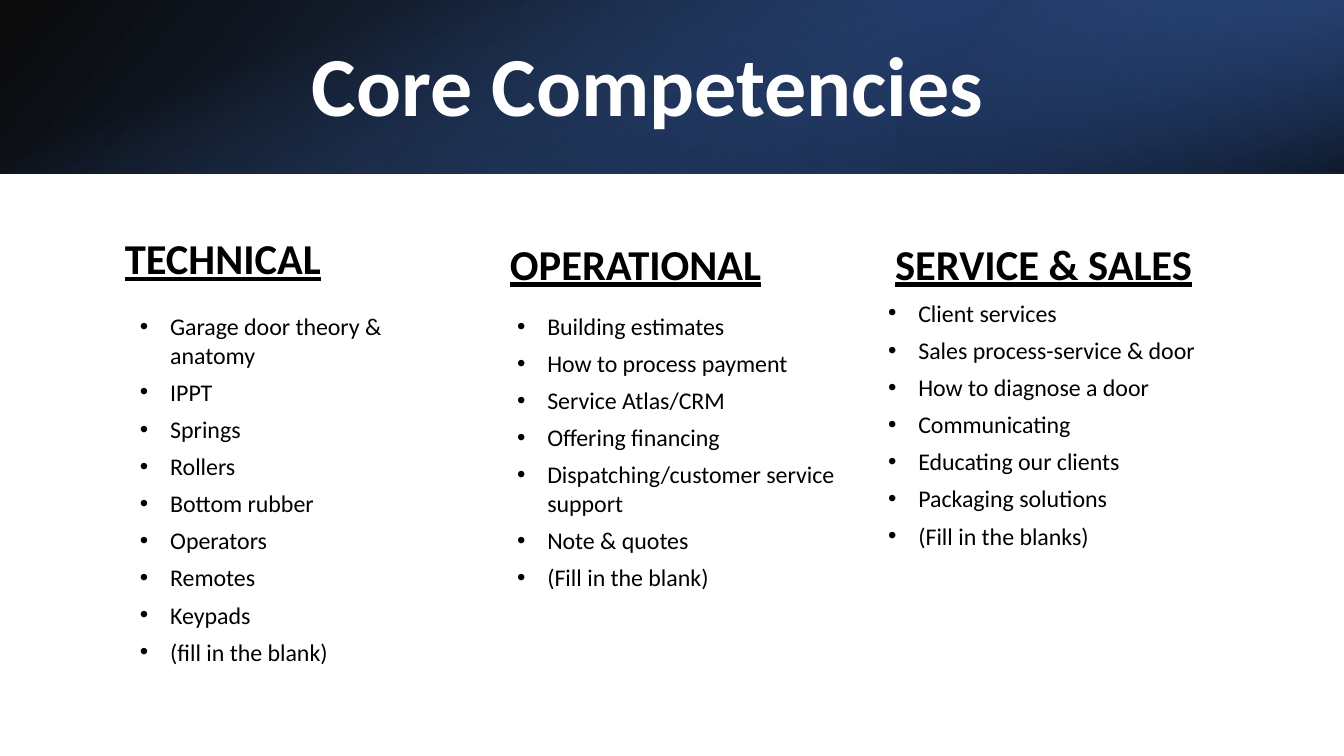
from lxml import etree
from pptx import Presentation
from pptx import util as u
from pptx.dml.color import RGBColor
from pptx.enum import shapes, text
from pptx.oxml.ns import qn

BLACK = RGBColor(0x00, 0x00, 0x00)
WHITE = RGBColor(0xFF, 0xFF, 0xFF)
NAVY = RGBColor(0x20, 0x38, 0x64)
DEEP_BLUE = RGBColor(0x2F, 0x55, 0x97)
BLUE = RGBColor(0x44, 0x72, 0xC4)

SLIDE_WIDTH, SLIDE_HEIGHT = 13.33, 7.5
BANNER_HEIGHT = 1.72
COLUMN_WIDTH, HEADING_TOP, HEADING_HEIGHT, LIST_HEIGHT = 3.44, 2.31, 0.6, 3.85

# Heading, heading left, heading line spacing, list left, list top, items
COLUMNS = [
    ("TECHNICAL", 1.14, 0.9, 1.29, 3.04,
     ["Garage door theory & anatomy", "IPPT", "Springs", "Rollers", "Bottom rubber",
      "Operators", "Remotes", "Keypads", "(fill in the blank)"]),
    ("OPERATIONAL", 4.96, 1.0, 5.03, 3.04,
     ["Building estimates", "How to process payment", "Service Atlas/CRM",
      "Offering financing", "Dispatching/customer service support",
      "Note & quotes", "(Fill in the blank)"]),
    ("SERVICE & SALES", 8.78, 1.0, 8.71, 2.91,
     ["Client services", "Sales process-service & door", "How to diagnose a door",
      "Communicating", "Educating our clients", "Packaging solutions",
      "(Fill in the blanks)"]),
]


class SlideBuilder:
    font_name = "Calibri"
    bullet_indent = u.Inches(0.3)

    def __init__(self, slide):
        self.slide = slide

    def gradient_panel(self, box, stops, angle, rotation=0, flip=False):
        """Add a rectangle; each stop is (position, colour, opacity %), angle is clockwise."""
        shape = self.slide.shapes.add_shape(
            shapes.MSO_SHAPE.RECTANGLE, *map(u.Inches, box))
        shape.shadow.inherit = False
        shape.line.fill.background()
        shape.rotation = rotation
        properties = shape.element.spPr
        if flip:
            properties.find(qn("a:xfrm")).set("flipH", "1")
        shape.fill.gradient()
        shape.fill.gradient_angle = 360 - angle
        for stop, (position, colour, _) in zip(shape.fill.gradient_stops, stops):
            stop.position = position / 100
            stop.color.rgb = colour
        for colour_element, (_, _, opacity) in zip(properties.iter(qn("a:srgbClr")), stops):
            etree.SubElement(colour_element, qn("a:alpha")).set("val", str(opacity * 1000))

    def text_box(self, box, lines, size, colour=BLACK, bold=False, underline=False,
                 bullets=False, spacing=1.0, after=6, align=text.PP_ALIGN.LEFT,
                 anchor=text.MSO_ANCHOR.TOP):
        frame = self.slide.shapes.add_textbox(*map(u.Inches, box)).text_frame
        frame.word_wrap = True
        frame.vertical_anchor = anchor
        for index, line in enumerate(lines):
            paragraph = frame.add_paragraph() if index else frame.paragraphs[0]
            paragraph.text = line
            if bullets:
                self.add_bullet(paragraph)
            paragraph.alignment = align
            paragraph.line_spacing = spacing
            paragraph.space_after = u.Pt(after)
            font = paragraph.font
            font.name, font.size = self.font_name, u.Pt(size)
            font.bold, font.underline = bold, underline
            font.color.rgb = colour

    def add_bullet(self, paragraph):
        properties = paragraph._p.get_or_add_pPr()
        properties.set("marL", str(self.bullet_indent))
        properties.set("indent", str(-self.bullet_indent))
        etree.SubElement(properties, qn("a:buFont")).set("typeface", "Arial")
        etree.SubElement(properties, qn("a:buChar")).set("char", "•")


def main():
    presentation = Presentation()
    presentation.slide_width = u.Inches(SLIDE_WIDTH)
    presentation.slide_height = u.Inches(SLIDE_HEIGHT)
    builder = SlideBuilder(presentation.slides.add_slide(presentation.slide_layouts[6]))

    # Banner: three layered gradients
    builder.gradient_panel((0, 0, SLIDE_WIDTH, BANNER_HEIGHT),
                           [(0, BLACK, 96), (100, DEEP_BLUE, 100)], 140, flip=True)
    builder.gradient_panel((8.89, 0, 4.44, BANNER_HEIGHT),
                           [(19, NAVY, 68), (100, BLUE, 79)], 320, rotation=180, flip=True)
    offset = (SLIDE_WIDTH - BANNER_HEIGHT) / 2
    builder.gradient_panel((offset, -offset, BANNER_HEIGHT, SLIDE_WIDTH),
                           [(23, BLUE, 0), (99, BLACK, 74)], 340, rotation=90)

    # Title
    builder.text_box((2.57, 0.2, 7.71, 1.37), ["Core Competencies"], 60, WHITE, bold=True,
                     spacing=0.9, after=0, align=text.PP_ALIGN.CENTER,
                     anchor=text.MSO_ANCHOR.MIDDLE)

    # Competency columns
    for heading, heading_left, spacing, list_left, list_top, items in COLUMNS:
        builder.text_box((heading_left, HEADING_TOP, COLUMN_WIDTH, HEADING_HEIGHT),
                         [heading], 30.4, bold=True, underline=True, spacing=spacing)
        builder.text_box((list_left, list_top, COLUMN_WIDTH, LIST_HEIGHT),
                         items, 17.1, bullets=True)

    presentation.save("out.pptx")


if __name__ == "__main__":
    main()
